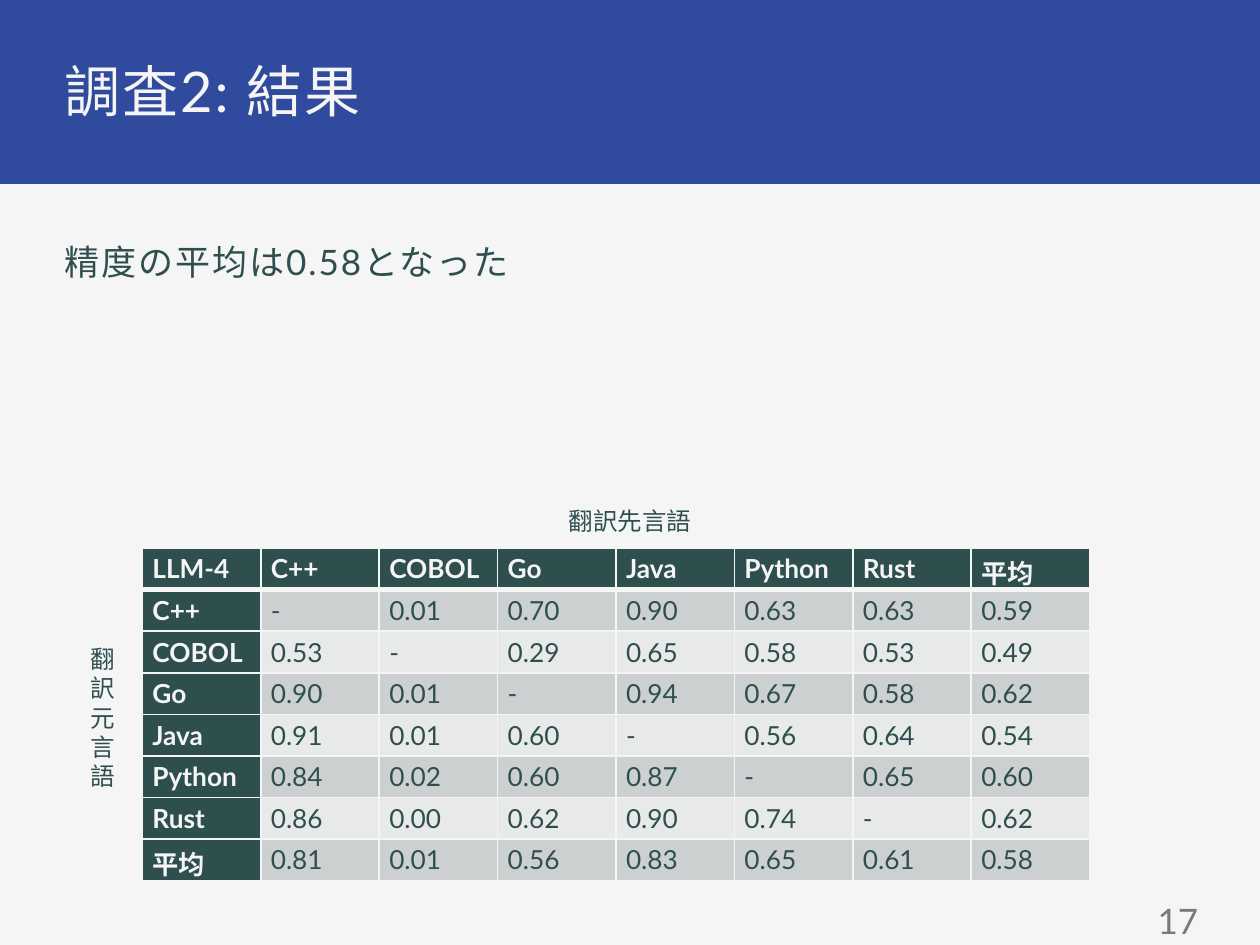
from lxml import etree
from pptx import Presentation
from pptx import util as u
from pptx.dml.color import RGBColor
from pptx.enum import shapes, text
from pptx.oxml import ns

# Content
TITLE = "調査2: 結果"
MESSAGE = "精度の平均は0.58となった"
PAGE = "17"
SOURCE_LABEL, TARGET_LABEL = "翻訳元言語", "翻訳先言語"
LANGUAGES = ["C++", "COBOL", "Go", "Java", "Python", "Rust", "平均"]
SCORES = [
    ["-", "0.01", "0.70", "0.90", "0.63", "0.63", "0.59"],
    ["0.53", "-", "0.29", "0.65", "0.58", "0.53", "0.49"],
    ["0.90", "0.01", "-", "0.94", "0.67", "0.58", "0.62"],
    ["0.91", "0.01", "0.60", "-", "0.56", "0.64", "0.54"],
    ["0.84", "0.02", "0.60", "0.87", "-", "0.65", "0.60"],
    ["0.86", "0.00", "0.62", "0.90", "0.74", "-", "0.62"],
    ["0.81", "0.01", "0.56", "0.83", "0.65", "0.61", "0.58"],
]
ROWS = [["LLM-4"] + LANGUAGES] + [[n] + r for n, r in zip(LANGUAGES, SCORES)]

# Style and layout, in inches
C = {"paper": "F5F5F5", "band": "304A9E", "ink": "2F4F4F", "page": "7A7A7A",
     "odd": "CDD0D0", "even": "E8E9E9"}
FONT = "Lato"
W, H = 10, 7.5
MARGIN, BLEED = 0.43, 0.02
TABLE_X, TABLE_Y, COL_W, ROW_H = 1.13, 4.35, 0.94, 0.31
BOX_INSETS = (0.06,) * 4
LABEL_INSETS = (0.1, 0.05, 0.1, 0.05)
LEFT, CENTER, RIGHT = text.PP_ALIGN.LEFT, text.PP_ALIGN.CENTER, text.PP_ALIGN.RIGHT


def rgb(name):
    return RGBColor.from_string(C[name])


def style(p, size, color, bold=False):
    p.font.name, p.font.size, p.font.bold = FONT, u.Pt(size), bold
    p.font.color.rgb = rgb(color)


def set_insets(frame, insets):
    (frame.margin_left, frame.margin_top,
     frame.margin_right, frame.margin_bottom) = map(u.Inches, insets)


def add_text(s, words, box, size, color, align=LEFT, insets=BOX_INSETS,
             anchor=text.MSO_ANCHOR.TOP, line=1.0, tracking=0):
    tf = s.shapes.add_textbox(*map(u.Inches, box)).text_frame
    tf.word_wrap, tf.vertical_anchor = True, anchor
    set_insets(tf, insets)
    p = tf.paragraphs[0]
    p.alignment, p.line_spacing = align, line
    r = p.add_run()
    r.text = words
    style(p, size, color)
    if tracking:
        r.font.bold = False
        r.font.size = u.Pt(size)
        r._r.get_or_add_rPr().set("spc", str(round(tracking * 100)))


def add_borders(cell, widths):
    tc_pr = cell._tc.get_or_add_tcPr()
    for i, (side, width) in enumerate(widths.items()):
        ln = etree.Element(ns.qn(f"a:ln{side}"), w=str(u.Pt(width)))
        fill = etree.SubElement(ln, ns.qn("a:solidFill"))
        etree.SubElement(fill, ns.qn("a:srgbClr"), val=C["paper"])
        tc_pr.insert(i, ln)


def add_scores(s):
    n_rows, n_cols = len(ROWS), len(ROWS[0])
    table = s.shapes.add_table(
        n_rows, n_cols, u.Inches(TABLE_X), u.Inches(TABLE_Y),
        u.Inches(n_cols * COL_W), u.Inches(n_rows * ROW_H)).table
    for col in table.columns:
        col.width = u.Inches(COL_W)
    for i, row in enumerate(ROWS):
        table.rows[i].height = u.Inches(ROW_H)
        for j, words in enumerate(row):
            cell, head = table.cell(i, j), i == 0 or j == 0
            cell.text = words
            set_insets(cell, (0.08, 0.04, 0.08, 0.04))
            style(cell.text_frame.paragraphs[0], 15, "paper" if head else "ink", head)
            cell.fill.solid()
            cell.fill.fore_color.rgb = rgb("ink" if head else "odd" if i % 2 else "even")
            add_borders(cell, {"L": 1, "R": 1, "T": 3 if i == 1 else 1,
                               "B": 3 if i == 0 else 1})


def main():
    prs = Presentation()
    prs.slide_width, prs.slide_height = u.Inches(W), u.Inches(H)
    s = prs.slides.add_slide(prs.slide_layouts[6])
    s.background.fill.solid()
    s.background.fill.fore_color.rgb = rgb("paper")

    # Title band
    band = s.shapes.add_shape(
        shapes.MSO_SHAPE.RECTANGLE,
        *map(u.Inches, (-BLEED, -BLEED, W + 2 * BLEED, 1.48)))
    band.shadow.inherit = False
    band.fill.solid()
    band.fill.fore_color.rgb = rgb("band")
    band.line.fill.background()
    inner = W - 2 * MARGIN
    add_text(s, TITLE, (MARGIN, 0.43, inner, 0.59), 32, "paper",
             insets=(0.08, 0.08, 0.08, 0.06), line=0.9, tracking=1.1)

    # Message and page number
    add_text(s, MESSAGE, (MARGIN, 1.89, inner, 5.18), 20, "ink",
             insets=(0.08, 0.06, 0.06, 0.06), line=0.9, tracking=1.1)
    add_text(s, PAGE, (W - MARGIN - 2.25, 7.11, 2.25, 0.39), 20, "page", RIGHT,
             anchor=text.MSO_ANCHOR.MIDDLE)

    # Score table with its axis labels
    add_scores(s)
    add_text(s, SOURCE_LABEL, (0.62, 5.06, 0.33, 1.28), 14, "ink", insets=LABEL_INSETS)
    add_text(s, TARGET_LABEL, ((W - 1.84) / 2, 3.97, 1.84, 0.34), 14, "ink", CENTER,
             insets=LABEL_INSETS)
    prs.save("out.pptx")


if __name__ == "__main__":
    main()
